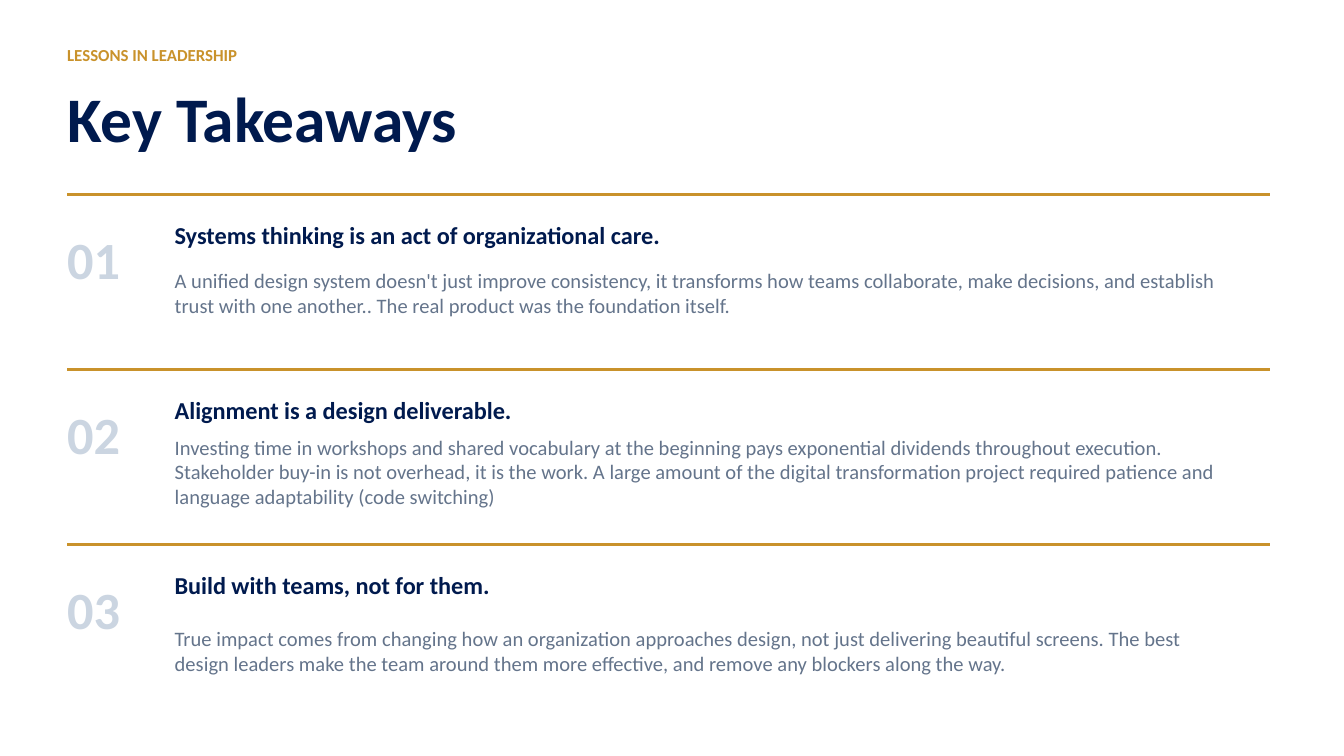
"""Build the Key Takeaways slide: a heading above three ruled, numbered lessons."""
from pptx import Presentation
from pptx.dml.color import RGBColor
from pptx.enum.shapes import MSO_CONNECTOR as Conn
from pptx.enum.text import MSO_ANCHOR as Anchor, MSO_AUTO_SIZE as Fit, PP_ALIGN as Align
from pptx.oxml.ns import qn
from pptx.util import Pt

GOLD, NAVY, PALE, SLATE = "C9922B", "001A4E", "CBD5E1", "64748B"
LEFT, RIGHT, INDENT = 36, 680.4, 93.6


def tint(code):
    return RGBColor.from_string(code)


def write(shape, box, text, size, color, bold=True):
    shape.left, shape.top, shape.width, shape.height = map(Pt, box)
    frame = shape.text_frame
    frame.word_wrap = True
    frame.auto_size = Fit.NONE
    frame.vertical_anchor = Anchor.MIDDLE
    frame.margin_left = frame.margin_right = 0
    frame.margin_top = frame.margin_bottom = 0
    para = frame.paragraphs[0]
    para.alignment = Align.LEFT
    run = para.add_run()
    run.text = text
    font = run.font
    font.name, font.size, font.bold = "Calibri", Pt(size), bold
    font.color.rgb = tint(color)


lessons = [
    ("Systems thinking is an act of organizational care.",
     "A unified design system doesn't just improve consistency, it transforms how teams "
     "collaborate, make decisions, and establish trust with one another.. The real product "
     "was the foundation itself."),
    ("Alignment is a design deliverable.",
     "Investing time in workshops and shared vocabulary at the beginning pays exponential "
     "dividends throughout execution. Stakeholder buy-in is not overhead, it is the work. "
     "A large amount of the digital transformation project required patience and language "
     "adaptability (code switching)"),
    ("Build with teams, not for them.",
     "True impact comes from changing how an organization approaches design, not just "
     "delivering beautiful screens. The best design leaders make the team around them more "
     "effective, and remove any blockers along the way."),
]

deck = Presentation()
deck.slide_width, deck.slide_height = Pt(720), Pt(405)
slide = deck.slides.add_slide(deck.slide_layouts[5])
slide.background.fill.solid()
slide.background.fill.fore_color.rgb = tint("FFFFFF")
shapes = slide.shapes

label = shapes.add_textbox(0, 0, 0, 0)
write(label, (LEFT, 21.6, 288, 15.84), "LESSONS IN LEADERSHIP", 9, GOLD)
write(shapes.title, (LEFT, 39.6, 504, 46.8), "Key Takeaways", 34, NAVY)

for i, (head, body) in enumerate(lessons):
    y = 104.4 + 93.6 * i
    rule = shapes.add_connector(Conn.STRAIGHT, Pt(LEFT), Pt(y), Pt(RIGHT), Pt(y))
    rule.line.color.rgb = tint(GOLD)
    rule.line.width = Pt(1.5)
    props = rule.element.find(qn("p:spPr"))
    props.append(props.makeelement(qn("a:effectLst"), {}))

    top = y + 7.2
    parts = [
        ((LEFT, top, 54, 54), f"{i + 1:02}", 28, PALE, True),
        ((INDENT, top, 446.4, 28.8), head, 13, NAVY, True),
        ((INDENT, 132.48 + 95.76 * i, 567.36, 48.96), body, 11, SLATE, False),
    ]
    for part in parts:
        write(shapes.add_textbox(0, 0, 0, 0), *part)

deck.save("out.pptx")
